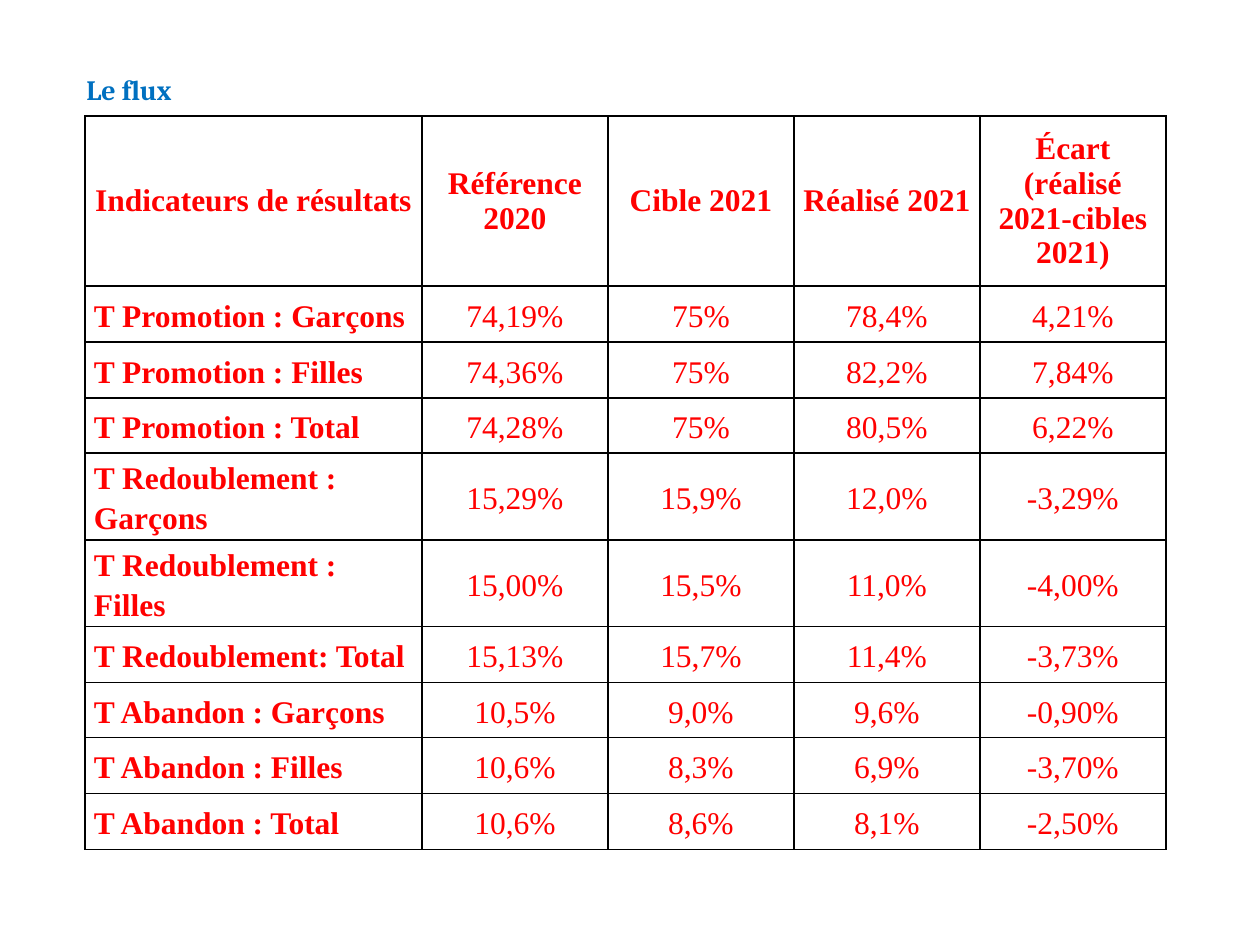
from lxml import etree
from pptx import Presentation
from pptx import util as u
from pptx.dml.color import RGBColor
from pptx.enum import text
from pptx.oxml.ns import qn

PX = u.Inches(1) // 126
COLORS = {"title": "0070C0", "table": "FF0000", "border": "000000"}
COLUMN_WIDTHS = [337] + [186] * 4
ROW_EDGES = [116, 286, 342, 398, 453, 540, 627, 683, 738, 794, 850]

HEADERS = ["Indicateurs de résultats", "Référence 2020", "Cible 2021",
           "Réalisé 2021", "Écart\n(réalisé 2021-cibles 2021)"]
RATES = [
    ["T Promotion : Garçons", "74,19%", "75%", "78,4%", "4,21%"],
    ["T Promotion : Filles", "74,36%", "75%", "82,2%", "7,84%"],
    ["T Promotion : Total", "74,28%", "75%", "80,5%", "6,22%"],
    ["T Redoublement : Garçons", "15,29%", "15,9%", "12,0%", "-3,29%"],
    ["T Redoublement : Filles", "15,00%", "15,5%", "11,0%", "-4,00%"],
    ["T Redoublement: Total", "15,13%", "15,7%", "11,4%", "-3,73%"],
    ["T Abandon : Garçons", "10,5%", "9,0%", "9,6%", "-0,90%"],
    ["T Abandon : Filles", "10,6%", "8,3%", "6,9%", "-3,70%"],
    ["T Abandon : Total", "10,6%", "8,6%", "8,1%", "-2,50%"],
]


def px(length):
    return u.Emu(length * PX)


def set_font(paragraph, name, size, color, bold):
    font = paragraph.font
    font.name, font.size, font.bold = name, u.Pt(size), bold
    font.color.rgb = RGBColor.from_string(COLORS[color])


def add_title(slide, wording):
    title = slide.shapes.add_textbox(px(74), px(66), px(536), px(47))
    title.text_frame.word_wrap = True
    paragraph = title.text_frame.paragraphs[0]
    paragraph.text = wording
    set_font(paragraph, "Cambria", 16, "title", True)


def add_borders(cell):
    properties = cell._tc.get_or_add_tcPr()
    for position, side in enumerate(("a:lnL", "a:lnR", "a:lnT", "a:lnB")):
        line = etree.Element(qn(side), w=str(u.Pt(1)))
        fill = etree.SubElement(line, qn("a:solidFill"))
        etree.SubElement(fill, qn("a:srgbClr"), val=COLORS["border"])
        properties.insert(position, line)


def fill_cell(cell, wording, is_header, is_label):
    cell.text = wording
    cell.fill.background()
    cell.vertical_anchor = text.MSO_ANCHOR.MIDDLE
    cell.margin_left = cell.margin_right = px(9)
    cell.margin_top = cell.margin_bottom = 0
    add_borders(cell)
    for paragraph in cell.text_frame.paragraphs:
        centered = is_header or not is_label
        paragraph.alignment = text.PP_ALIGN.CENTER if centered else text.PP_ALIGN.LEFT
        if not is_header:
            paragraph.line_spacing = 1.15
            paragraph.space_after = u.Pt(10)
        set_font(paragraph, "Times New Roman", 18, "table", is_header or is_label)


def add_rates_table(slide):
    rows = [HEADERS] + RATES
    table = slide.shapes.add_table(
        len(rows), len(HEADERS), px(85), px(ROW_EDGES[0]),
        px(sum(COLUMN_WIDTHS)), px(ROW_EDGES[-1] - ROW_EDGES[0])).table
    table.horz_banding = False
    for column, width in zip(table.columns, COLUMN_WIDTHS):
        column.width = px(width)
    for row, top, bottom in zip(table.rows, ROW_EDGES, ROW_EDGES[1:]):
        row.height = px(bottom - top)
    for r, wordings in enumerate(rows):
        for c, wording in enumerate(wordings):
            fill_cell(table.cell(r, c), wording, r == 0, c == 0)


def main():
    presentation = Presentation()
    presentation.slide_width, presentation.slide_height = u.Inches(10), u.Inches(7.5)
    slide = presentation.slides.add_slide(presentation.slide_layouts[6])
    add_rates_table(slide)
    add_title(slide, "Le flux")
    presentation.save("out.pptx")


if __name__ == "__main__":
    main()
